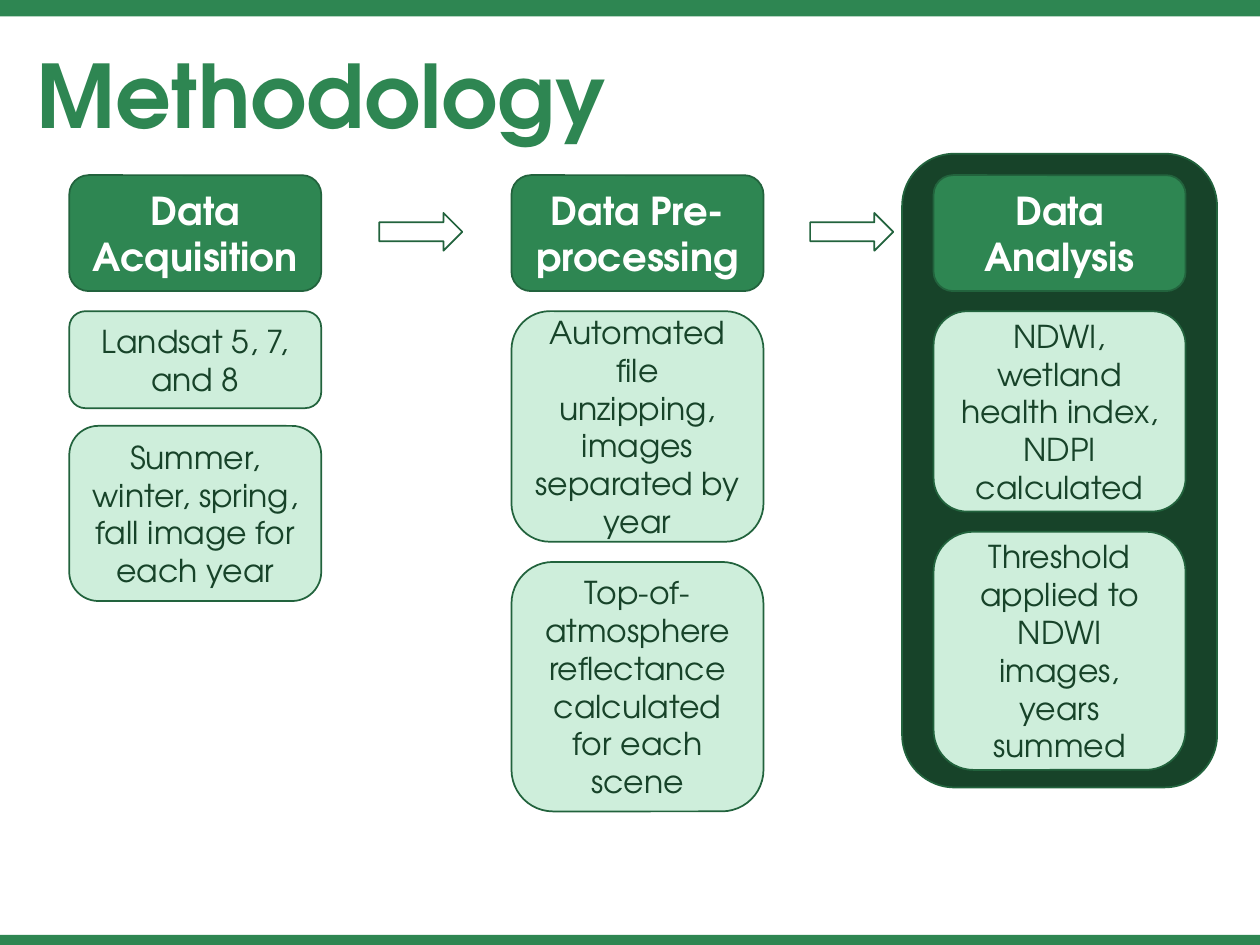
from pptx import Presentation
from pptx.dml.color import RGBColor
from pptx.enum.shapes import MSO_SHAPE as Shape
from pptx.enum.text import MSO_ANCHOR as Anchor, MSO_AUTO_SIZE as AutoSize, PP_ALIGN as Align
from pptx.util import Inches, Pt

FONT = "TeX Gyre Adventor"
GREEN, DARK, PALE, EDGE, WHITE = "2E8652", "174329", "CEEEDB", "22633D", "FFFFFF"
COLUMNS, ROWS = 100, 75
STEP_WIDTH, HEADER_TOP, HEADER_HEIGHT, FIRST_CARD_TOP = 20, 13.9, 9.2, 24.7

STEPS = [
    (5.5, 1.4, "Data Acquisition", [
        (7.7, "Landsat 5, 7, and 8"),
        (13.9, "Summer, winter, spring, fall image for each year")]),
    (40.6, 1.6, "Data Pre-processing", [
        (18.3, "Automated file unzipping, images separated by year"),
        (19.8, "Top-of-atmosphere reflectance calculated for each scene")]),
    (74.1, 1.6, "Data Analysis", [
        (15.9, "NDWI, wetland health index, NDPI calculated"),
        (18.9, "Threshold applied to NDWI images, years summed")]),
]


def color(value):
    """Turn a hex string into a colour."""
    return RGBColor.from_string(value)


class FlowSlide:
    """Draws the parts of a process slide on a grid of columns and rows."""

    def __init__(self, deck):
        """Add a title-only slide to the deck."""
        self.column = deck.slide_width / COLUMNS
        self.row = deck.slide_height / ROWS
        self.page = deck.slides.add_slide(deck.slide_layouts[5])

    def place(self, left, top, width, height):
        """Convert grid units to slide lengths."""
        return (round(left * self.column), round(top * self.row),
                round(width * self.column), round(height * self.row))

    def label(self, shape, text, size, ink, bold=False, align=Align.CENTER, anchor=Anchor.MIDDLE):
        """Put one formatted paragraph in a shape."""
        frame = shape.text_frame
        frame.word_wrap = True
        frame.auto_size = AutoSize.NONE
        frame.vertical_anchor = anchor
        para = frame.paragraphs[0]
        para.text = text
        para.alignment = align
        para.font.name, para.font.size, para.font.bold = FONT, Pt(size), bold
        para.font.color.rgb = color(ink)
        return para

    def title(self, text, *area):
        """Move and format the title placeholder."""
        heading = self.page.shapes.title
        heading.left, heading.top, heading.width, heading.height = self.place(*area)
        para = self.label(heading, text, 50, GREEN, True, Align.LEFT, Anchor.BOTTOM)
        para.line_spacing = 0.9

    def shape(self, kind, *area, fill=None, edge=EDGE):
        """Add a flat preset shape."""
        shape = self.page.shapes.add_shape(kind, *self.place(*area))
        shape.shadow.inherit = False
        if fill:
            shape.fill.solid()
            shape.fill.fore_color.rgb = color(fill)
        else:
            shape.fill.background()
        if edge:
            shape.line.color.rgb = color(edge)
            shape.line.width = Pt(1)
        else:
            shape.line.fill.background()
        return shape

    def step(self, left, gap, name, cards):
        """Stack a header and its cards in one column."""
        header = self.shape(Shape.ROUNDED_RECTANGLE, left, HEADER_TOP, STEP_WIDTH,
                            HEADER_HEIGHT, fill=GREEN)
        self.label(header, name, 22, WHITE, bold=True)
        top = FIRST_CARD_TOP
        for height, text in cards:
            card = self.shape(Shape.ROUNDED_RECTANGLE, left, top, STEP_WIDTH, height, fill=PALE)
            self.label(card, text, 18, DARK)
            top += height + gap


def main():
    """Build and save the methodology slide."""
    deck = Presentation()
    deck.slide_width, deck.slide_height = Inches(10), Inches(7.5)
    flow = FlowSlide(deck)
    for top, height in ((0, 1.3), (74.2, 0.8)):
        flow.shape(Shape.RECTANGLE, 0, top, COLUMNS, height, fill=GREEN, edge=None)
    flow.shape(Shape.ROUNDED_RECTANGLE, 71.6, 12.2, 25, 50.3, fill=DARK)
    flow.title("Methodology", 1.9, 3.2, 89.1, 9)
    for step in STEPS:
        flow.step(*step)
    for left in (30.1, 64.3):
        flow.shape(Shape.RIGHT_ARROW, left, 16.9, 6.6, 3)
    deck.save("out.pptx")


if __name__ == "__main__":
    main()
